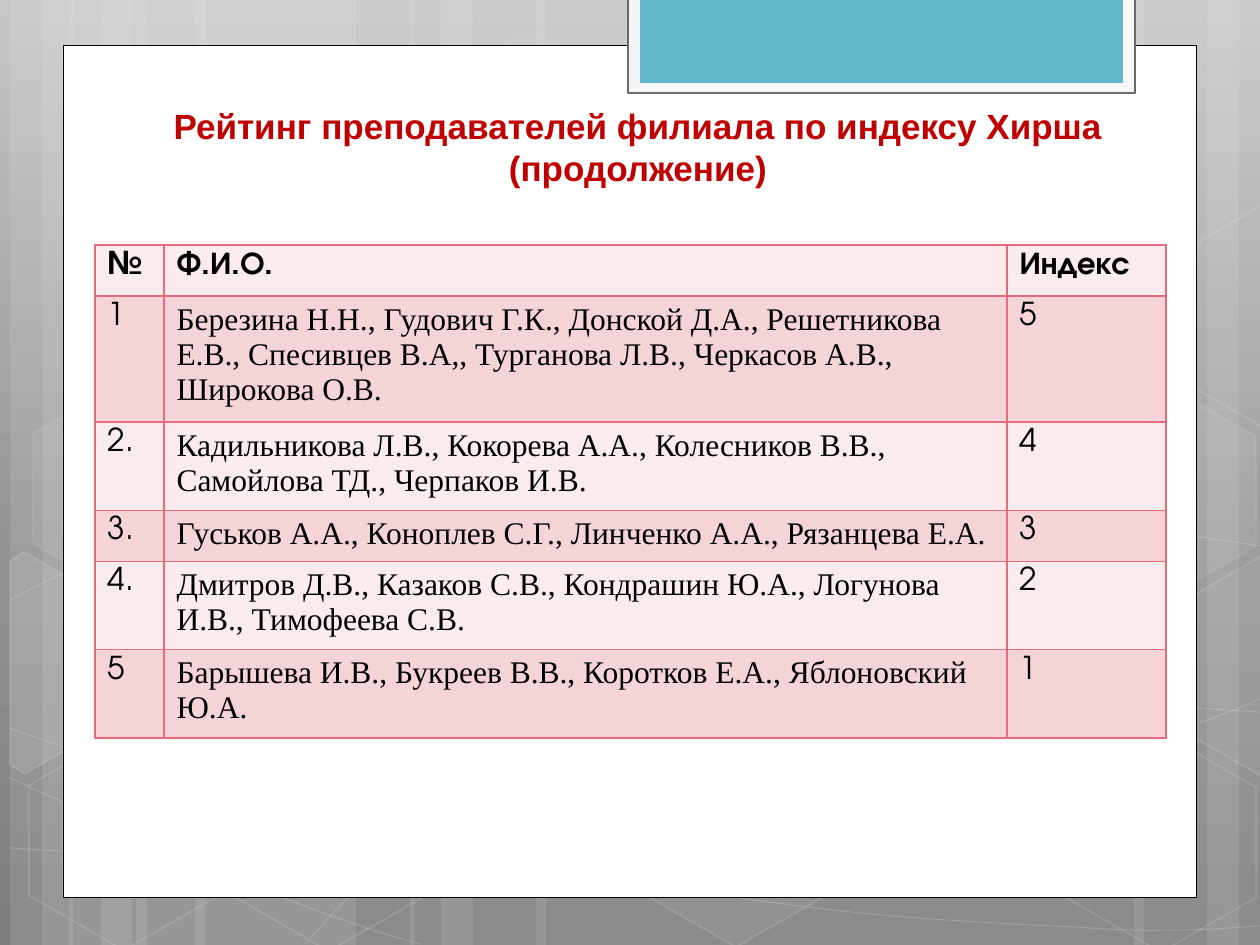
from copy import deepcopy

from lxml import etree
from pptx import Presentation
from pptx import util as u
from pptx.dml.color import RGBColor
from pptx.enum import shapes, text
from pptx.oxml import ns

EMU_PER_PX = 914400 / 126
PAGE = (1260, 945)
WHITE, BLACK = "FFFFFF", "000000"
HEXAGON_SIZE = (220, 191)

BACKDROP = [(0, "C6C6C8"), (0.62, "909092"), (1, "7E7E81")]
STREAKS = [
    (136, 220), (10, 63), (42, 105), (195, 220), (69, 63), (101, 105),
    (924, 220), (1207, 63), (1134, 105), (536, 388), (410, 63), (441, 105),
]
CURVES = [
    [(9, 848), (77, 852), (145, 856), (239, 854), (334, 853), (451, 850), (577, 838),
     (703, 825), (882, 801), (998, 777), (1113, 753), (1231, 716), (1269, 694)],
    [(9, 601), (45, 581), (82, 562), (152, 543), (224, 524), (326, 498), (437, 488),
     (549, 479), (685, 478), (824, 488), (963, 498), (1193, 537), (1269, 547)],
    [(8, 777), (160, 847), (311, 916), (421, 944)],
    [(9, 728), (48, 742), (88, 756), (161, 776), (234, 795), (344, 827), (450, 848),
     (554, 869), (687, 892), (791, 905), (896, 919), (1008, 924), (1075, 927),
     (1140, 932), (1158, 930), (1191, 930), (1223, 929), (1246, 927), (1269, 925)],
    [(305, 944), (328, 919), (350, 893), (381, 871), (411, 848), (454, 823), (489, 805),
     (524, 788), (546, 780), (592, 767), (638, 754), (722, 737), (766, 728),
     (811, 719), (818, 719), (857, 717), (896, 713), (958, 709), (1000, 708),
     (1045, 707), (1116, 708), (1116, 708), (1144, 708), (1173, 708), (1201, 708),
     (1223, 710), (1245, 711), (1256, 712), (1264, 713), (1268, 712), (1268, 713)],
]
HEXAGONS = [
    (421, 45, 4, 8), (626, 742, 6, 12), (14, 745, 0, 12), (18, 393, 7, 8),
    (219, 746, 0, 12), (949, 571, 10, 12), (1051, 747, 0, 12), (1051, 396, 7, 8),
]
CUT_HEXAGONS = [
    ([(10, 561), (24, 552), (121, 607), (120, 718), (25, 774), (10, 765)], 10),
    ([(1167, 611), (1261, 556), (1271, 562), (1271, 772), (1263, 777), (1167, 722)], 4),
    ([(1167, 261), (1261, 205), (1273, 212), (1271, 422), (1263, 427), (1167, 372)], 0),
]
RATING = [
    ("№", "Ф.И.О.", "Индекс"),
    ("1", "Березина Н.Н., Гудович Г.К., Донской Д.А., Решетникова Е.В., "
          "Спесивцев В.А,, Турганова Л.В., Черкасов А.В., Широкова О.В.", "5"),
    ("2.", "Кадильникова Л.В., Кокорева А.А., Колесников В.В., "
           "Самойлова ТД., Черпаков И.В.", "4"),
    ("3.", "Гуськов А.А., Коноплев С.Г., Линченко А.А., Рязанцева Е.А.", "3"),
    ("4.", "Дмитров Д.В., Казаков С.В., Кондрашин Ю.А., Логунова И.В., "
           "Тимофеева С.В.", "2"),
    ("5", "Барышева И.В., Букреев В.В., Коротков Е.А., Яблоновский Ю.А.", "1"),
]
COLUMN_WIDTHS = (69, 843, 159)
ROW_HEIGHT = 51


def px(length):
    return u.Emu(round(length * EMU_PER_PX))


def rgb(value):
    return RGBColor.from_string(value)


class RatingSlide:
    """Holds the style and the current slide and draws each kind of element."""

    heading_font, body_font, names_font = "Arial", "TeX Gyre Adventor", "Times New Roman"
    heading_color, border_color = "C00000", "E66C7D"
    bands = ("FAEBEC", "F5D4D7")

    def __init__(self, deck):
        self.slide = deck.slides.add_slide(deck.slide_layouts[6])
        self.shapes = self.slide.shapes

    def backdrop(self, stops):
        fill = self.slide.background.fill
        fill.gradient()
        fill.gradient_angle = 270
        stop_list = self.slide.element.find(".//" + ns.qn("a:gsLst"))
        stop_list.append(deepcopy(stop_list[-1]))
        for stop, (position, color) in zip(fill.gradient_stops, stops):
            stop.position = position
            stop.color.rgb = rgb(color)

    def paint(self, shape, fill=None, alpha=100, line=None, width=1, line_alpha=100):
        shape.shadow.inherit = False
        for part, color in ((shape.fill, fill), (shape.line.fill, line)):
            if color:
                part.solid()
                part.fore_color.rgb = rgb(color)
            else:
                part.background()
        if line:
            shape.line.width = u.Pt(width)
        for route, opacity in (("a:solidFill",), alpha), (("a:ln", "a:solidFill"), line_alpha):
            steps = [ns.qn(tag) for tag in (*route, "a:srgbClr")]
            color = shape.element.spPr.find("/".join(steps))
            if color is not None and opacity < 100:
                etree.SubElement(color, ns.qn("a:alpha"), val=str(opacity * 1000))

    def preset(self, kind, box, **style):
        shape = self.shapes.add_shape(kind, *map(px, box))
        self.paint(shape, **style)
        return shape

    def rectangle(self, *box, **style):
        self.preset(shapes.MSO_SHAPE.RECTANGLE, box, **style)

    def hexagon(self, left, top, **style):
        shape = self.preset(shapes.MSO_SHAPE.HEXAGON, (left, top, *HEXAGON_SIZE), **style)
        shape.adjustments[0] = 0.29
        shape.adjustments[1] = 1.15
        shape.rotation = 30

    def outline(self, points, close, **style):
        builder = self.shapes.build_freeform(*points[0], scale=EMU_PER_PX)
        builder.add_line_segments(points[1:], close=close)
        shape = builder.convert_to_shape()
        self.paint(shape, **style)
        return shape

    def curve(self, knots, **style):
        shape = self.outline(knots, False, **style)
        route = shape.element.find(".//" + ns.qn("a:path"))
        segments = route.findall(ns.qn("a:lnTo"))
        for i in range(0, len(segments), 3):
            bend = etree.SubElement(route, ns.qn("a:cubicBezTo"))
            for segment in segments[i:i + 3]:
                bend.append(segment[0])
                route.remove(segment)

    def format_runs(self, paragraph, font, size, color, bold):
        for run in paragraph.runs:
            run.font.name = font
            run.font.size = u.Pt(size)
            run.font.bold = bold
            run.font.color.rgb = rgb(color)

    def heading(self, wording, *box):
        frame = self.shapes.add_textbox(*map(px, box)).text_frame
        frame.word_wrap = True
        frame.vertical_anchor = text.MSO_ANCHOR.BOTTOM
        paragraph = frame.paragraphs[0]
        paragraph.text = wording
        paragraph.alignment = text.PP_ALIGN.CENTER
        paragraph.line_spacing = u.Pt(24)
        self.format_runs(paragraph, self.heading_font, 20, self.heading_color, True)

    def border(self, cell):
        properties = cell._tc.get_or_add_tcPr()
        for side in ("a:lnL", "a:lnR", "a:lnT", "a:lnB"):
            edge = etree.SubElement(properties, ns.qn(side), w=str(u.Pt(1)))
            solid = etree.SubElement(edge, ns.qn("a:solidFill"))
            etree.SubElement(solid, ns.qn("a:srgbClr"), val=self.border_color)

    def table(self, records, left, top, widths, row_height):
        box = map(px, (left, top, sum(widths), row_height * len(records)))
        grid = self.shapes.add_table(len(records), len(widths), *box).table
        for column, width in zip(grid.columns, widths):
            column.width = px(width)
        for r, record in enumerate(records):
            for c, wording in enumerate(record):
                cell = grid.cell(r, c)
                cell.text_frame.text = wording
                self.border(cell)
                cell.fill.solid()
                cell.fill.fore_color.rgb = rgb(self.bands[r % 2])
                font = self.names_font if r > 0 and c == 1 else self.body_font
                self.format_runs(cell.text_frame.paragraphs[0], font, 18, BLACK, r == 0)


def main():
    deck = Presentation()
    deck.slide_width, deck.slide_height = map(px, PAGE)
    page = RatingSlide(deck)
    page.backdrop(BACKDROP)
    for left, width in STREAKS:
        page.rectangle(left, 0, width, PAGE[1], fill=WHITE, alpha=10)
    for knots in CURVES:
        page.curve(knots, line=WHITE, width=0.5, line_alpha=20)
    for left, top, alpha, line_alpha in HEXAGONS:
        page.hexagon(left, top, fill=WHITE if alpha else None, alpha=alpha,
                     line=WHITE, line_alpha=line_alpha)
    for corners, alpha in CUT_HEXAGONS:
        page.outline(corners, True, fill=WHITE if alpha else None,
                     alpha=alpha, line=WHITE, line_alpha=12)
    page.rectangle(63, 45, 1134, 853, fill=WHITE, line=BLACK, width=0.5)
    page.rectangle(628, -3, 507, 96, fill="F5F5F5", line="68686D", width=1.25)
    page.rectangle(640, -3, 483, 86, fill="60B5CC")
    page.heading("Рейтинг преподавателей филиала по индексу Хирша\v(продолжение)",
                 154, 95, 968, 100)
    page.table(RATING, 95, 245, COLUMN_WIDTHS, ROW_HEIGHT)
    deck.save("out.pptx")


if __name__ == "__main__":
    main()
